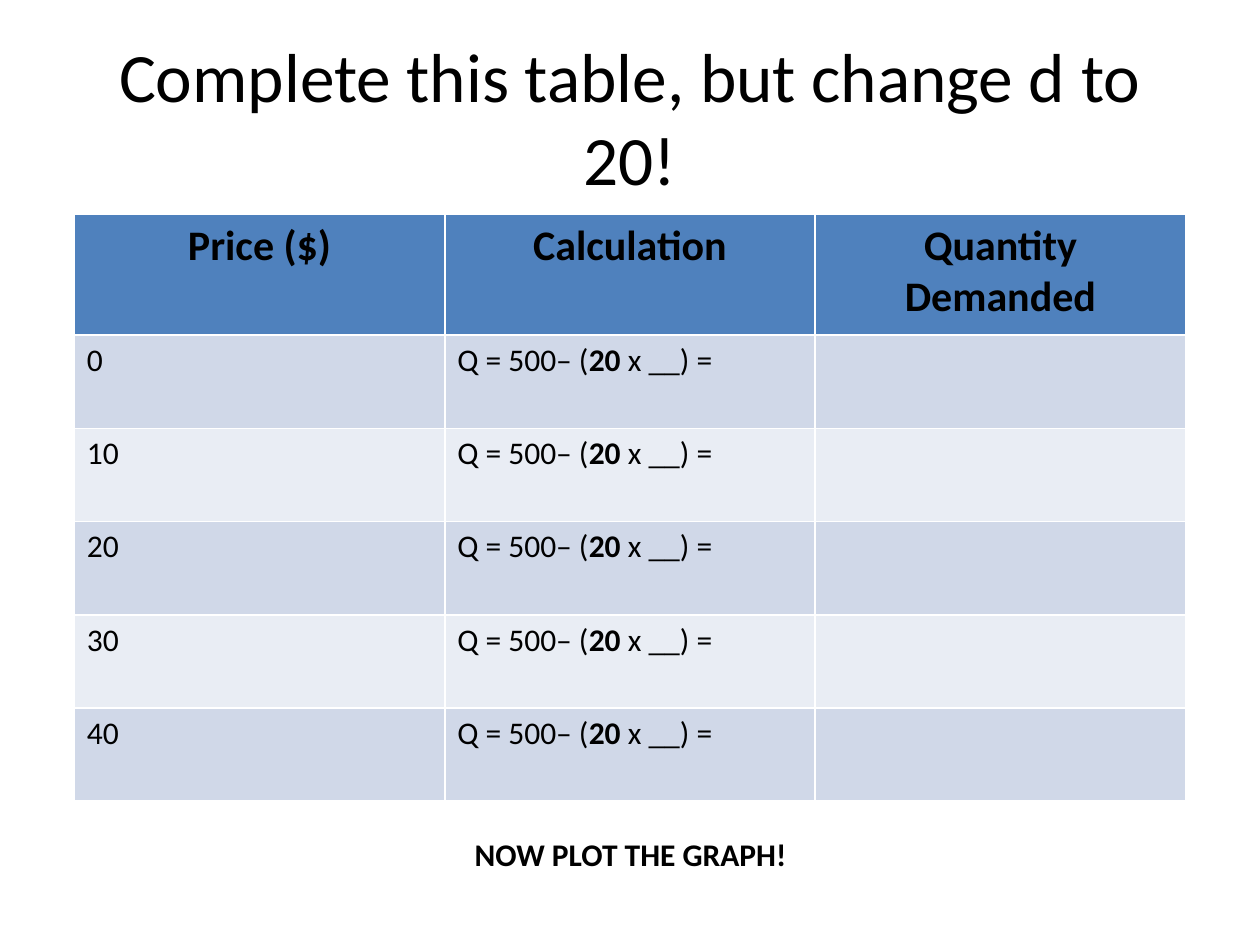
from pptx import Presentation
from pptx.dml.color import RGBColor
from pptx.enum.text import MSO_ANCHOR, PP_ALIGN
from pptx.util import Inches, Pt

CENTER = PP_ALIGN.CENTER
LEFT = PP_ALIGN.LEFT
MIDDLE = MSO_ANCHOR.MIDDLE
TOP = MSO_ANCHOR.TOP

SLIDE_WIDTH, SLIDE_HEIGHT = 10, 7.5
FONT = "Calibri"
BLACK = "000000"
HEADER_FILL = "4F81BD"
BAND_FILLS = ("D0D8E8", "E9EDF4")

HEADERS = ("Price ($)", "Calculation", "Quantity Demanded")
PRICES = (0, 10, 20, 30, 40)
# Text and boldness of each part of the formula
FORMULA = (("Q = 500– (", False), ("20 ", True), ("x __) =", False))
HEADER_HEIGHT, ROW_HEIGHT = 0.96, 0.74

# Boxes: left, top, width, height in inches
TITLE_BOX = (0.5, 0.3, SLIDE_WIDTH - 1, 1.25)
TABLE_BOX = (0.59, 1.7, 8.82, HEADER_HEIGHT + ROW_HEIGHT * len(PRICES))
PROMPT_BOX = (0.91, 6.58, 8.19, 0.4)


def color(hex_string):
    return RGBColor.from_string(hex_string)


def write(paragraph, parts, size, alignment=LEFT):
    """Fill a paragraph with (text, bold) parts."""
    paragraph.alignment = alignment
    paragraph.font.name = FONT
    paragraph.font.size = Pt(size)
    paragraph.font.color.rgb = color(BLACK)
    for text, bold in parts:
        run = paragraph.add_run()
        run.text = text
        run.font.bold = bold


def add_centered_text(slide, box, text, size, bold=False, anchor=TOP):
    text_box = slide.shapes.add_textbox(*map(Inches, box))
    frame = text_box.text_frame
    frame.word_wrap = True
    frame.vertical_anchor = anchor
    write(frame.paragraphs[0], [(text, bold)], size, CENTER)


def add_demand_table(slide, box):
    # The default table style draws the white grid lines
    table = slide.shapes.add_table(
        len(PRICES) + 1, len(HEADERS), *map(Inches, box)).table
    for column in table.columns:
        column.width = Inches(box[2] / len(HEADERS))
    for index, row in enumerate(table.rows):
        row.height = Inches(ROW_HEIGHT if index else HEADER_HEIGHT)
        fill = BAND_FILLS[(index - 1) % 2] if index else HEADER_FILL
        for cell in row.cells:
            cell.fill.solid()
            cell.fill.fore_color.rgb = color(fill)

    # Header row
    for column, header in enumerate(HEADERS):
        paragraph = table.cell(0, column).text_frame.paragraphs[0]
        write(paragraph, [(header, True)], 24, CENTER)

    # Price rows, with the quantity left for the student
    for row, price in enumerate(PRICES, start=1):
        for column, parts in enumerate(([(str(price), False)], FORMULA)):
            write(table.cell(row, column).text_frame.paragraphs[0], parts, 18)


def main():
    presentation = Presentation()
    presentation.slide_width = Inches(SLIDE_WIDTH)
    presentation.slide_height = Inches(SLIDE_HEIGHT)
    slide = presentation.slides.add_slide(presentation.slide_layouts[6])

    add_centered_text(slide, TITLE_BOX,
                      "Complete this table, but change d to 20!",
                      39.6, anchor=MIDDLE)
    add_demand_table(slide, TABLE_BOX)
    add_centered_text(slide, PROMPT_BOX, "NOW PLOT THE GRAPH!", 18, bold=True)

    presentation.save("out.pptx")


if __name__ == "__main__":
    main()
